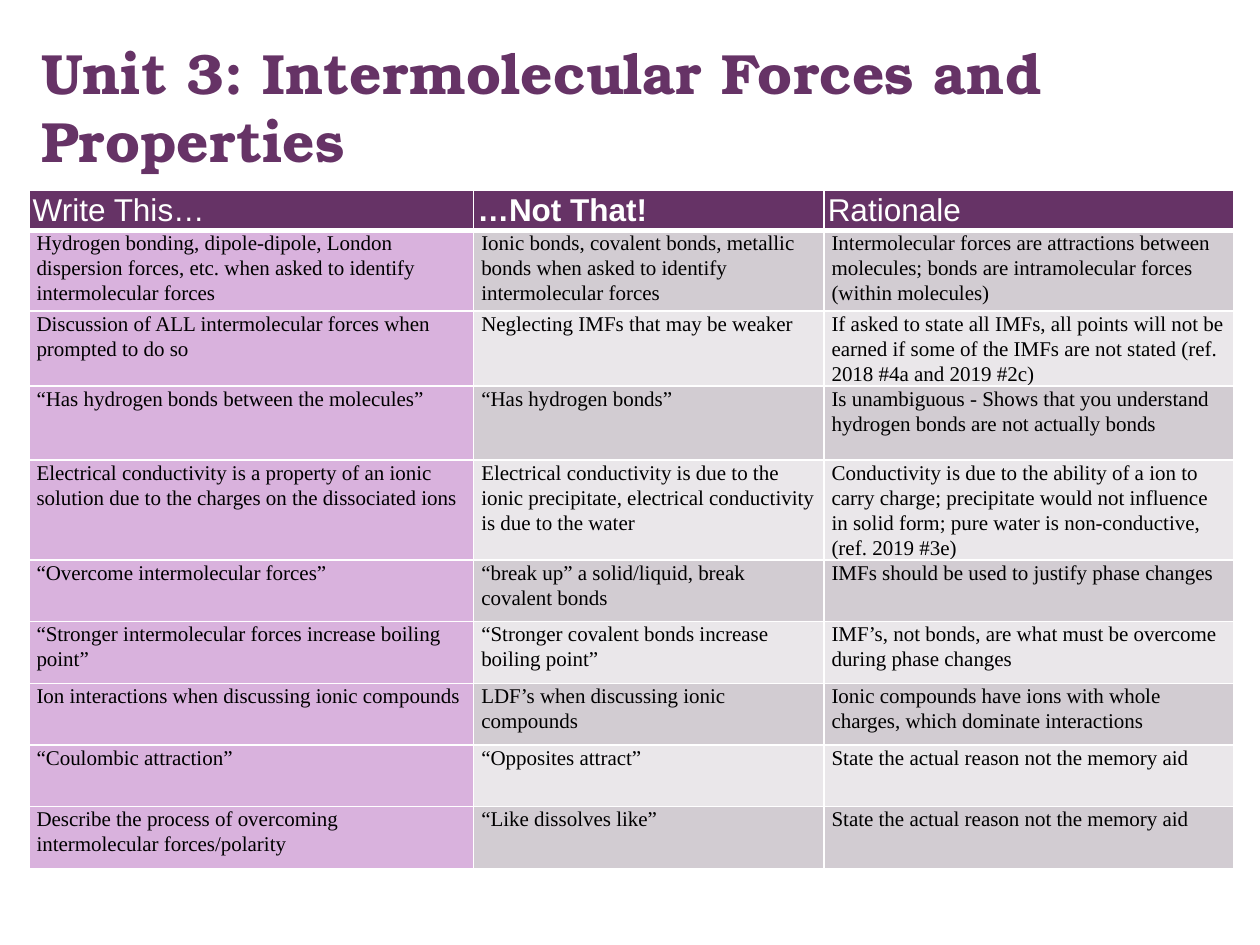
from dataclasses import dataclass

from lxml.etree import SubElement
from pptx import Presentation
from pptx.dml.color import RGBColor as Color
from pptx.enum.text import MSO_ANCHOR as Anchor, MSO_AUTO_SIZE as AutoSize, PP_ALIGN as Align
from pptx.oxml.ns import qn
from pptx.util import Inches, Pt


@dataclass(frozen=True)
class Theme:
    purple: str = "663366"
    lilac: str = "D9B2DD"
    bands: tuple = ("D2CCD2", "EAE7EA")
    white: str = "FFFFFF"
    black: str = "000000"
    title_font: str = "TeX Gyre Bonum"
    header_font: str = "Arial"
    body_font: str = "Times New Roman"
    title_size: float = 32.4
    header_size: float = 18
    body_size: float = 12
    line_spacing: float = 1.07


THEME = Theme()
SLIDE_SIZE = (10, 7.5)
LEFT, WIDTH = 0.23, 9.56
TITLE_TOP, TITLE_HEIGHT = 0.25, 0.66
TABLE_TOP = 1.51
COLUMN_WIDTHS = (3.53, 2.78, 3.25)
ROW_HEIGHTS = (0.32, 0.64, 0.49, 0.59, 0.64) + (0.49,) * 5

TITLE = "Unit 3: Intermolecular Forces and Properties"
HEADERS = (("Write This…", False), ("…Not That!", True), ("Rationale", False))
ADVICE = (
    ("Hydrogen bonding, dipole-dipole, London dispersion forces, etc. when asked to identify intermolecular forces",
     "Ionic bonds, covalent bonds, metallic bonds when asked to identify intermolecular forces",
     "Intermolecular forces are attractions between molecules; bonds are intramolecular forces (within molecules)"),
    ("Discussion of ALL intermolecular forces when prompted to do so",
     "Neglecting IMFs that may be weaker",
     "If asked to state all IMFs, all points will not be earned if some of the IMFs are not stated "
     "(ref. 2018 #4a and 2019 #2c)"),
    ("“Has hydrogen bonds between the molecules”",
     "“Has hydrogen bonds”",
     "Is unambiguous - Shows that you understand hydrogen bonds are not actually bonds"),
    ("Electrical conductivity is a property of an ionic solution due to the charges on the dissociated ions",
     "Electrical conductivity is due to the ionic precipitate, electrical conductivity is due to the water",
     "Conductivity is due to the ability of a ion to carry charge; precipitate would not influence in solid form; "
     "pure water is non-conductive, (ref. 2019 #3e)"),
    ("“Overcome intermolecular forces”",
     "“break up” a solid/liquid, break covalent bonds",
     "IMFs should be used to justify phase changes"),
    ("“Stronger intermolecular forces increase boiling point”",
     "“Stronger covalent bonds increase boiling point”",
     "IMF’s, not bonds, are what must be overcome during phase changes"),
    ("Ion interactions when discussing ionic compounds",
     "LDF’s when discussing ionic compounds",
     "Ionic compounds have ions with whole charges, which dominate interactions"),
    ("“Coulombic attraction”",
     "“Opposites attract”",
     "State the actual reason not the memory aid"),
    ("Describe the process of overcoming intermolecular forces/polarity",
     "“Like dissolves like”",
     "State the actual reason not the memory aid"),
)


def add_run(paragraph, text, font, size, color, bold=False):
    run = paragraph.add_run()
    run.text = text
    run.font.name = font
    run.font.size = Pt(size)
    run.font.bold = bold
    run.font.color.rgb = Color.from_string(color)


def set_borders(cell, bottom_width):
    properties = cell._tc.get_or_add_tcPr()
    widths = {"a:lnL": 1, "a:lnR": 1, "a:lnT": 1, "a:lnB": bottom_width}
    for position, (side, width) in enumerate(widths.items()):
        border = SubElement(properties, qn(side), w=str(Pt(width)))
        SubElement(SubElement(border, qn("a:solidFill")), qn("a:srgbClr"), val=THEME.white)
        properties.insert(position, border)


def fill_cell(cell, text, fill, inset, font, size, color, bold=False, bottom_width=1):
    cell.fill.solid()
    cell.fill.fore_color.rgb = Color.from_string(fill)
    cell.margin_left = cell.margin_right = Inches(inset)
    cell.margin_top = cell.margin_bottom = 0
    set_borders(cell, bottom_width)
    paragraph = cell.text_frame.paragraphs[0]
    paragraph.line_spacing = THEME.line_spacing
    add_run(paragraph, text, font, size, color, bold)


def add_title(slide):
    title = slide.shapes.title
    title.left, title.top = Inches(LEFT), Inches(TITLE_TOP)
    title.width, title.height = Inches(WIDTH), Inches(TITLE_HEIGHT)
    frame = title.text_frame
    frame.word_wrap = True
    frame.auto_size = AutoSize.NONE
    frame.vertical_anchor = Anchor.TOP
    heading = frame.paragraphs[0]
    heading.alignment = Align.LEFT
    add_run(heading, TITLE, THEME.title_font, THEME.title_size, THEME.purple, True)


def add_advice_table(slide):
    table = slide.shapes.add_table(
        len(ROW_HEIGHTS), len(COLUMN_WIDTHS), Inches(LEFT), Inches(TABLE_TOP),
        Inches(WIDTH), Inches(sum(ROW_HEIGHTS))).table
    table.horz_banding = False
    for column, width in zip(table.columns, COLUMN_WIDTHS):
        column.width = Inches(width)
    for row, height in zip(table.rows, ROW_HEIGHTS):
        row.height = Inches(height)
    for column, (label, bold) in enumerate(HEADERS):
        fill_cell(table.cell(0, column), label, THEME.purple, 0.03, THEME.header_font,
                  THEME.header_size, THEME.white, bold, bottom_width=3)
    for row, entries in enumerate(ADVICE):
        band = THEME.bands[row % 2]
        for column, entry in enumerate(entries):
            fill_cell(table.cell(row + 1, column), entry, band if column else THEME.lilac, 0.06,
                      THEME.body_font, THEME.body_size, THEME.black)


def main():
    deck = Presentation()
    deck.slide_width, deck.slide_height = map(Inches, SLIDE_SIZE)
    slide = deck.slides.add_slide(deck.slide_layouts[5])
    add_title(slide)
    add_advice_table(slide)
    deck.save("out.pptx")


if __name__ == "__main__":
    main()
